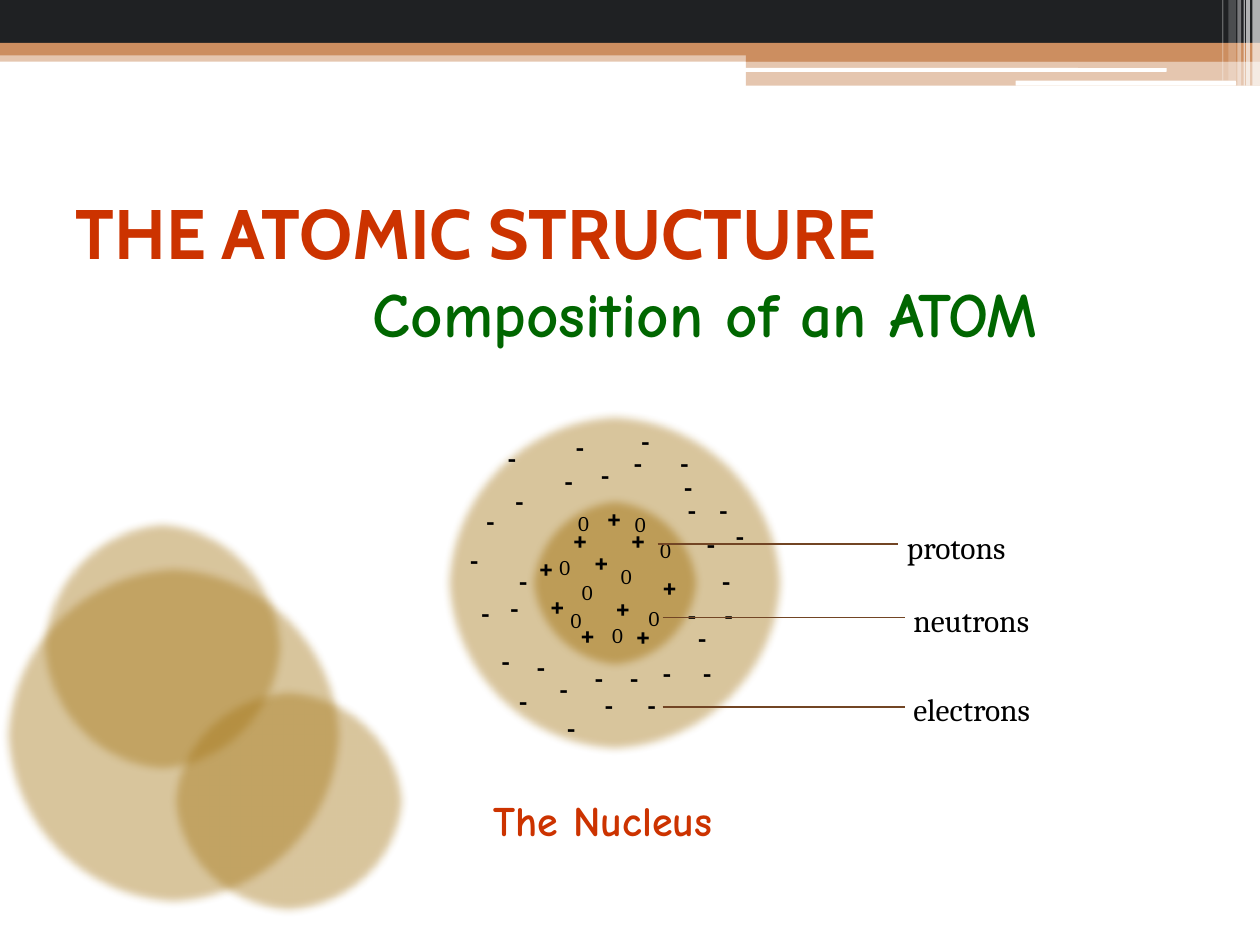
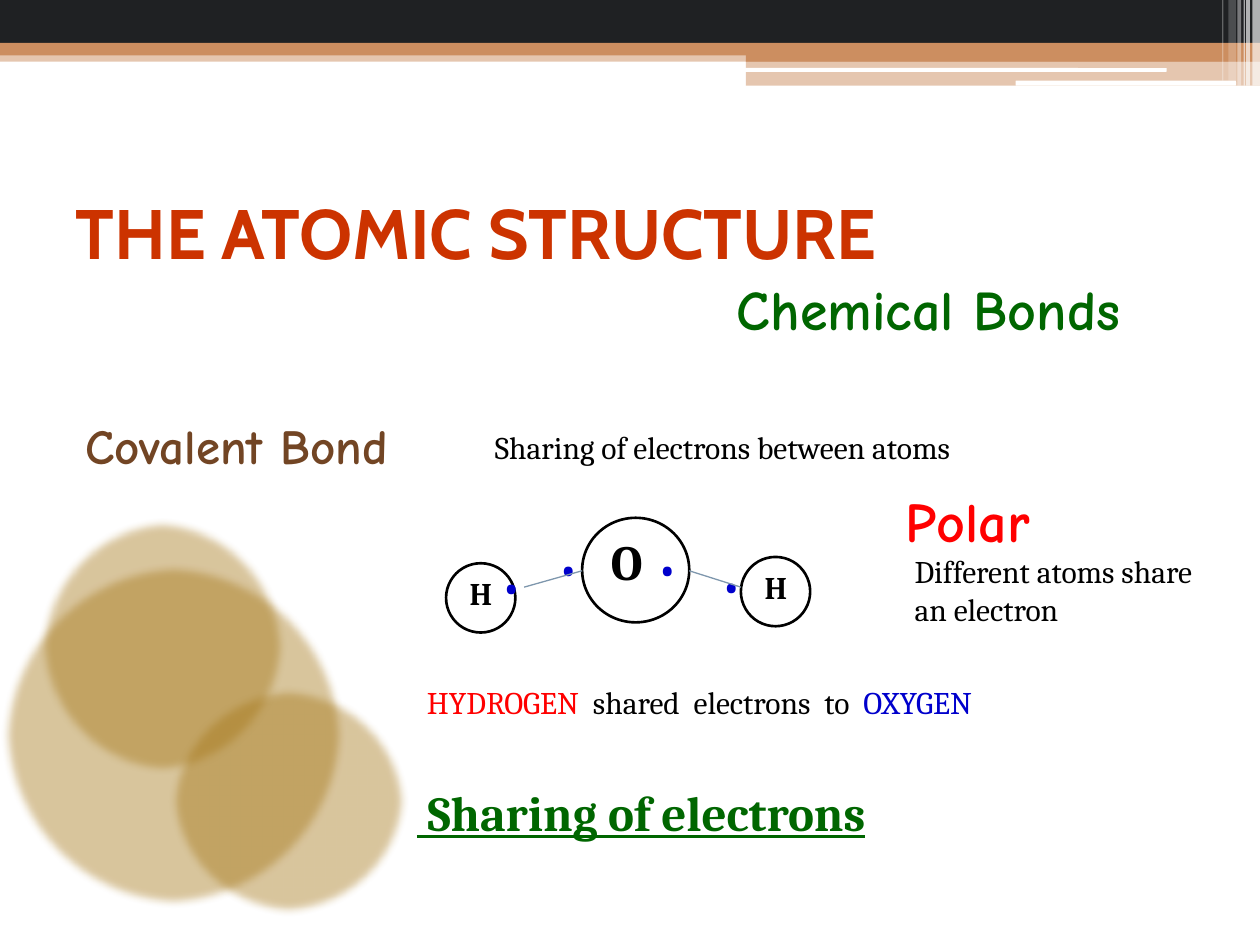
from dataclasses import dataclass
from typing import Optional

from lxml import etree
from pptx import Presentation
from pptx import util as u
from pptx.dml.color import RGBColor
from pptx.enum import shapes, text
from pptx.oxml.ns import qn

COLORS = {
    "dark": "1F2123",
    "copper": "CC8E60",
    "white": "FFFFFF",
    "gold": "A57617",
    "title": "CC3300",
    "green": "006600",
    "brown": "724524",
    "black": "000000",
    "red": "FF0000",
    "blue": "0000CC",
    "bond": "7E97AD",
}
BODY, HEAD, HAND = "Cambria", "Cabin", "Comic Neue"
RECT = shapes.MSO_SHAPE.RECTANGLE
ROUND = shapes.MSO_SHAPE.ROUNDED_RECTANGLE
OVAL = shapes.MSO_SHAPE.OVAL


@dataclass(frozen=True)
class Block:
    left: float
    top: float
    width: float
    height: float
    color: Optional[str] = None
    alpha: int = 100
    kind: int = RECT
    soft: bool = False


@dataclass(frozen=True)
class Callout:
    label: str
    start: float
    end: float
    y: float
    width: float


@dataclass(frozen=True)
class Atom:
    ring: Block
    symbol: str
    label: tuple[float, float, float, float]
    size: int


BANDS = [
    Block(0, 0.4, 10, 0.09, "copper", 50),
    Block(0, 0, 10, 0.34, "dark"),
    Block(0, 0.34, 10, 0.1, "copper"),
    Block(5.92, 0.39, 4.08, 0.1, "copper"),
    Block(5.92, 0.48, 4.08, 0.2, "copper", 50),
    Block(5.91, 0.54, 3.35, 0.03, "white", kind=ROUND),
    Block(8.06, 0.64, 1.75, 0.04, "white", kind=ROUND),
] + [
    Block(left, 0, width, height, "white", alpha)
    for left, width, height, alpha in [
        (9.94, 0.06, 0.68, 65),
        (9.89, 0.03, 0.68, 65),
        (9.87, 0.01, 0.68, 60),
        (9.82, 0.03, 0.68, 40),
        (9.75, 0.06, 0.64, 20),
        (9.7, 0.01, 0.64, 30),
    ]
]
BUBBLES = [
    Block(0, 4.46, 2.75, 2.75, "gold", 42, OVAL, True),
    Block(1.33, 5.43, 1.92, 1.85, "gold", 42, OVAL, True),
    Block(0.29, 4.1, 2, 2.06, "gold", 42, OVAL, True),
]
SHELL = Block(3.5, 3.25, 2.75, 2.75, "gold", 42, OVAL, True)
NUCLEUS = Block(4.17, 3.92, 1.42, 1.42, "gold", 51, OVAL, True)

PROTONS = [
    (4.44, 4.1), (4.61, 4.27), (4.9, 4.1), (4.26, 4.62), (5.15, 4.47),
    (4.78, 4.64), (4.5, 4.85), (4.94, 4.86), (4.17, 4.32), (4.71, 3.92),
]
ELECTRONS = [
    (5.74, 4.07), (5.51, 4.13), (5.63, 4.42), (5.36, 4.69), (5.65, 4.69),
    (5.44, 4.88), (5.16, 5.15), (5.48, 5.15), (4.16, 5.11), (4.02, 5.38),
    (4.34, 5.28), (4.4, 5.59), (4.9, 5.19), (4.7, 5.41), (5.61, 3.86),
    (4.99, 3.31), (5.33, 3.68), (5.36, 3.86), (4.62, 5.19), (5.04, 5.41),
    (4.93, 3.49), (4.67, 3.58), (4.47, 3.36), (4.38, 3.63), (3.76, 3.95),
    (3.99, 3.79), (3.93, 3.45), (4.02, 4.42), (3.72, 4.68), (3.95, 4.64),
    (3.63, 4.26), (3.88, 5.06), (5.3, 3.49),
]
NEUTRONS = [
    (4.83, 4.42), (4.52, 4.55), (4.94, 4.01), (4.76, 4.89), (5.14, 4.22),
    (5.05, 4.76), (4.34, 4.35), (4.49, 4), (4.43, 4.77),
]
PARTICLES = [
    ("+", PROTONS, 0.36, 0.37, 16, True),
    ("-", ELECTRONS, 0.29, 0.37, 16, True),
    ("0", NEUTRONS, 0.31, 0.3, 12, False),
]
CALLOUTS = [
    Callout("protons", 5.22, 7.13, 4.32, 1.07),
    Callout("neutrons", 5.26, 7.18, 4.9, 1.2),
    Callout("electrons", 5.26, 7.18, 5.61, 1.22),
]
ATOMS = [
    Atom(Block(4.62, 4.11, 0.85, 0.83, kind=OVAL), "O", (4.75, 4.17, 0.52, 0.57), 28),
    Atom(Block(5.88, 4.42, 0.55, 0.55, kind=OVAL), "H", (5.97, 4.46, 0.43, 0.4), 18),
    Atom(Block(3.54, 4.47, 0.55, 0.55, kind=OVAL), "H", (3.63, 4.51, 0.43, 0.4), 18),
]
SHARED_DOTS = [(4.36, 4.03), (5.14, 4.03), (5.65, 4.16), (3.91, 4.17)]
BONDS = [((4.16, 4.66), (4.62, 4.53)), ((5.88, 4.66), (5.47, 4.53))]


def rgb(name: str) -> RGBColor:
    return RGBColor.from_string(COLORS[name])


def inches(*values: float) -> list[int]:
    return [u.Inches(v) for v in values]


def draw_block(parent, block: Block) -> None:
    sp = parent.add_shape(
        block.kind, *inches(block.left, block.top, block.width, block.height))
    sp.shadow.inherit = False
    if block.color is None:
        sp.fill.background()
        sp.line.color.rgb = rgb("black")
        sp.line.width = u.Pt(1.5)
        return
    sp.fill.solid()
    sp.fill.fore_color.rgb = rgb(block.color)
    sp.line.fill.background()
    props = sp.fill._xPr
    if block.alpha < 100:
        color = props.find(qn("a:solidFill"))[0]
        etree.SubElement(color, qn("a:alpha"), val=str(block.alpha * 1000))
    if block.soft:
        effects = props.find(qn("a:effectLst"))
        etree.SubElement(effects, qn("a:softEdge"), rad=str(u.Pt(5)))


def add_run(p, content: str, *, size: int, font: str = BODY, color: str = "black",
            bold: bool = False, underline: bool = False) -> None:
    r = p.add_run()
    r.text = content
    r.font.name = font
    r.font.size = u.Pt(size)
    r.font.bold = bold
    r.font.underline = underline
    r.font.color.rgb = rgb(color)


def add_text(parent, content: str, at: tuple[float, float, float, float], *,
             wrap: bool = False, **style):
    tf = parent.add_textbox(*inches(*at)).text_frame
    tf.word_wrap = wrap
    tf.auto_size = text.MSO_AUTO_SIZE.SHAPE_TO_FIT_TEXT
    p = tf.paragraphs[0]
    add_run(p, content, **style)
    return p


def draw_line(parent, start: tuple[float, float], end: tuple[float, float],
              color: str, width: float) -> None:
    line = parent.add_connector(
        shapes.MSO_CONNECTOR.STRAIGHT, *inches(*start, *end))
    line.line.color.rgb = rgb(color)
    line.line.width = u.Pt(width)
    etree.SubElement(line.line._ln.getparent(), qn("a:effectLst"))


def draw_atom(parent, atom: Atom) -> None:
    group = parent.add_group_shape().shapes
    draw_block(group, atom.ring)
    add_text(group, atom.symbol, atom.label, size=atom.size, bold=True)


def new_slide(prs):
    s = prs.slides.add_slide(prs.slide_layouts[5])
    title = s.shapes.title
    title.left, title.top, title.width, title.height = inches(0.5, 1.25, 9, 1.17)
    tf = title.text_frame
    tf.word_wrap = True
    tf.auto_size = text.MSO_AUTO_SIZE.NONE
    tf.vertical_anchor = text.MSO_ANCHOR.MIDDLE
    p = tf.paragraphs[0]
    p.alignment = text.PP_ALIGN.LEFT
    add_run(p, "THE ATOMIC STRUCTURE", size=40, font=HEAD, color="title", bold=True)
    for block in BANDS:
        draw_block(s.shapes, block)
    bubbles = s.shapes.add_group_shape().shapes
    for block in BUBBLES:
        draw_block(bubbles, block)
    return s


def build_composition(prs) -> None:
    parent = new_slide(prs).shapes
    draw_block(parent, SHELL)
    draw_block(parent, NUCLEUS)
    for symbol, places, width, height, size, bold in PARTICLES:
        for left, top in places:
            add_text(parent, symbol, (left, top, width, height), size=size, bold=bold)
    for c in CALLOUTS:
        draw_line(parent, (c.start, c.y), (c.end, c.y), "brown", 1)
        add_text(parent, c.label, (c.end - 0.03, c.y - 0.18, c.width, 0.4), size=18)
    add_text(parent, "The Nucleus", (3.82, 6.26, 2.54, 0.5), wrap=True,
             size=24, font=HAND, color="title", bold=True)
    add_text(parent, "Composition of an ATOM", (2.86, 2.13, 7.06, 0.71),
             size=36, font=HAND, color="green", bold=True)


def build_bonds(prs) -> None:
    parent = new_slide(prs).shapes
    add_text(parent, "Sharing of electrons between atoms", (3.83, 3.35, 5.17, 0.4),
             wrap=True, size=18)
    add_text(parent, "Covalent Bond", (0.58, 3.25, 3.39, 0.57), wrap=True,
             size=28, font=HAND, color="brown", bold=True)
    p = add_text(parent, "HYDROGEN  ", (3.29, 5.37, 5.33, 0.4), size=18, color="red")
    add_run(p, "shared  electrons  to  ", size=18)
    add_run(p, "OXYGEN", size=18, color="blue")
    add_text(parent, " Sharing of electrons", (3.21, 6.16, 4.37, 0.57),
             size=28, color="green", bold=True, underline=True)
    for atom in ATOMS:
        draw_atom(parent, atom)
    for left, top in SHARED_DOTS:
        add_text(parent, ".", (left, top, 0.33, 0.71), wrap=True,
                 size=36, color="blue", bold=True)
    for start, end in BONDS:
        draw_line(parent, start, end, "bond", 0.75)
    add_text(parent, "Polar", (7.09, 3.81, 1.83, 0.64), wrap=True,
             size=32, font=HAND, color="red", bold=True)
    add_text(parent, "Different atoms share an electron", (7.16, 4.33, 2.59, 0.71),
             wrap=True, size=18)
    add_text(parent, "Chemical Bonds", (5.75, 2.13, 4.14, 0.64),
             size=32, font=HAND, color="green", bold=True)


def main() -> None:
    prs = Presentation()
    prs.slide_width, prs.slide_height = inches(10, 7.5)
    build_composition(prs)
    build_bonds(prs)
    prs.save("out.pptx")


if __name__ == "__main__":
    main()
